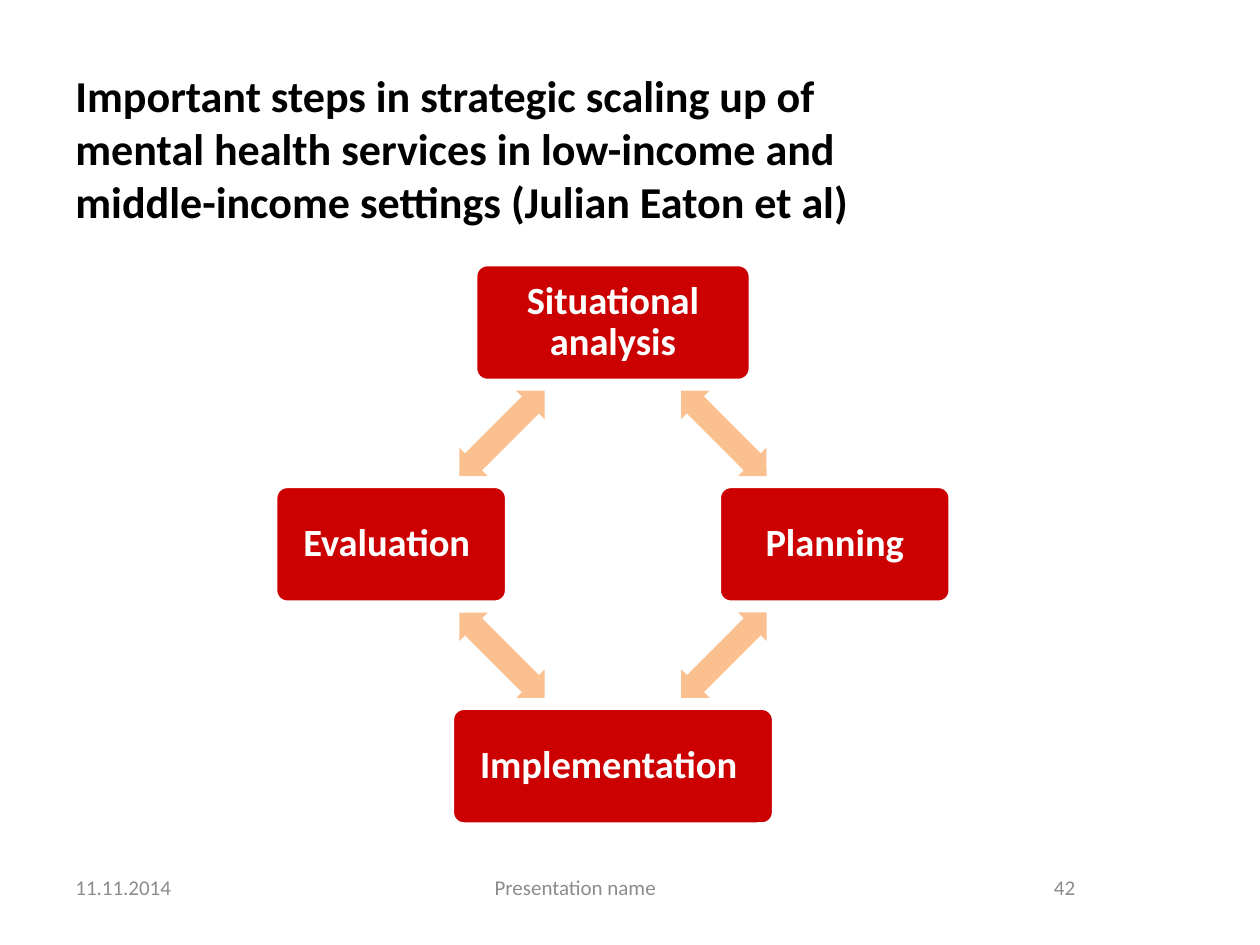
import math

from pptx import Presentation
from pptx.dml.color import RGBColor
from pptx.enum import shapes, text
from pptx.util import Pt

BLACK = RGBColor(0x00, 0x00, 0x00)
WHITE = RGBColor(0xFF, 0xFF, 0xFF)
GREY = RGBColor(0x8C, 0x8C, 0x8C)
RED = RGBColor(0xCC, 0x00, 0x00)
PEACH = RGBColor(0xFA, 0xC0, 0x90)

LEFT, CENTER, RIGHT = text.PP_ALIGN.LEFT, text.PP_ALIGN.CENTER, text.PP_ALIGN.RIGHT

# Steps clockwise from the top, with box widths
STEPS = [
    ("Situational analysis", 157),
    ("Planning", 132),
    ("Implementation ", 183.6),
    ("Evaluation ", 132),
]


def write(shape, wording, align, size, color, bold=False):
    frame = shape.text_frame
    frame.word_wrap = True
    frame.vertical_anchor = text.MSO_ANCHOR.MIDDLE
    paragraph = frame.paragraphs[0]
    paragraph.alignment = align
    run = paragraph.add_run()
    run.text = wording
    run.font.color.rgb = color
    for name, value in {"name": "Calibri", "size": Pt(size), "bold": bold}.items():
        setattr(run.font, name, value)
    return frame


def add_centered(slide, kind, x, y, width, height, fill):
    shape = slide.shapes.add_shape(
        kind, Pt(x - width / 2), Pt(y - height / 2), Pt(width), Pt(height))
    shape.shadow.inherit = False
    shape.fill.solid()
    shape.fill.fore_color.rgb = fill
    return shape


def add_title(slide, left, top, width, height):
    title = slide.shapes.add_textbox(Pt(left), Pt(top), Pt(width), Pt(height))
    write(title, "Important steps in strategic scaling up of mental health services "
          "in low-income and middle-income settings (Julian Eaton et al)",
          LEFT, 25.2, BLACK, True)


def add_footer(slide, left, top, width, height):
    side, middle = 168, 228
    gap = (width - 2 * side - middle) / 2
    x = left
    for wording, part_width, align in (
            ("11.11.2014", side, LEFT),
            ("Presentation name", middle, CENTER),
            ("42", side, RIGHT)):
        part = slide.shapes.add_textbox(Pt(x), Pt(top), Pt(part_width), Pt(height))
        write(part, wording, align, 12, GREY)
        x += part_width + gap


def add_cycle(slide, left, top, width, height):
    box_height = 66.2
    radius = (height - box_height) / 2
    center_x, center_y = left + width / 2, top + height / 2

    for index, (step, step_width) in enumerate(STEPS):
        # Step box
        angle = math.radians(90 * index - 90)
        box = add_centered(slide, shapes.MSO_SHAPE.ROUNDED_RECTANGLE,
                           center_x + radius * math.cos(angle),
                           center_y + radius * math.sin(angle),
                           step_width, box_height, RED)
        box.adjustments[0] = 0.1
        box.line.color.rgb = WHITE
        box.line.width = Pt(2)
        frame = write(box, step, CENTER, 22, WHITE, True)
        frame.paragraphs[0].line_spacing = 0.9
        for side in ("left", "top", "right", "bottom"):
            setattr(frame, f"margin_{side}", Pt(8.4))

        # Arrow halfway to the next step
        halfway = angle + math.pi / 4
        reach = radius / math.sqrt(2)
        arrow = add_centered(slide, shapes.MSO_SHAPE.LEFT_RIGHT_ARROW,
                             center_x + reach * math.cos(halfway),
                             center_y + reach * math.sin(halfway),
                             69, 23, PEACH)
        arrow.adjustments[0] = 0.6
        arrow.adjustments[1] = 0.5
        arrow.line.fill.background()
        arrow.rotation = 45 + 90 * index


def main():
    deck = Presentation()
    deck.slide_width, deck.slide_height = Pt(720), Pt(540)
    slide = deck.slides.add_slide(deck.slide_layouts[6])
    add_title(slide, 36, 39.6, 492.5, 90)
    add_footer(slide, 36, 492.5, 585.5, 28.8)
    add_cycle(slide, 157.5, 151.2, 385.5, 319.7)
    deck.save("out.pptx")


if __name__ == "__main__":
    main()
